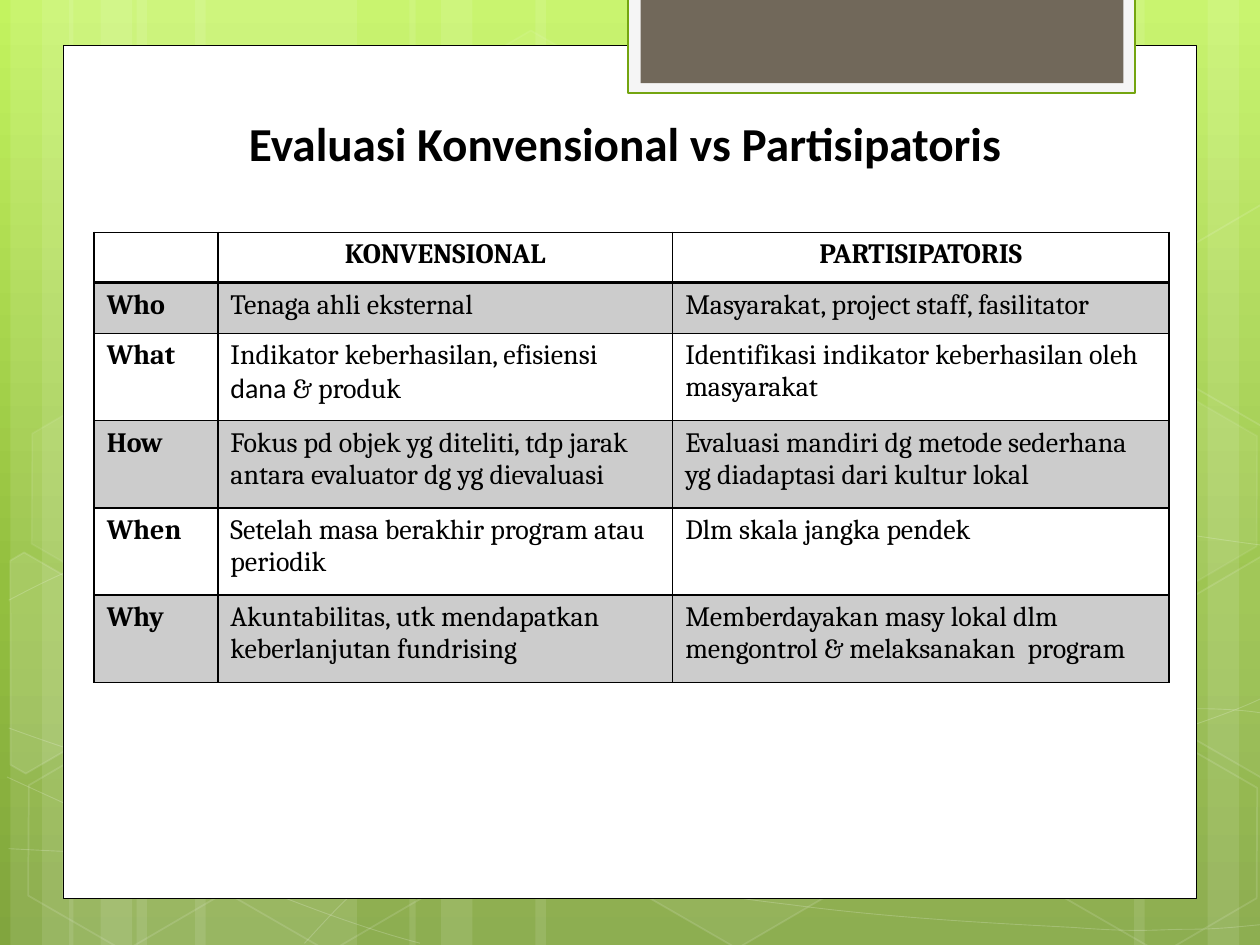
import copy
import lxml.etree
import pptx
import pptx.dml.color
import pptx.dml.fill
import pptx.enum.shapes
import pptx.enum.text
import pptx.oxml.ns
import pptx.util

Pt = pptx.util.Pt
qn = pptx.oxml.ns.qn
SHAPES = pptx.enum.shapes.MSO_SHAPE
CENTER = pptx.enum.text.PP_ALIGN.CENTER


def color(value):
    return pptx.dml.color.RGBColor.from_string(value)


def paint(parent, value, opacity=100):
    fill = pptx.dml.fill.FillFormat.from_fill_parent(parent)
    if not opacity:
        fill.background()
        return
    fill.solid()
    fill.fore_color.rgb = color(value)
    if opacity < 100:
        solid = parent.find(qn("a:solidFill")).find(qn("a:srgbClr"))
        lxml.etree.SubElement(solid, qn("a:alpha"), val=str(opacity * 1000))


presentation = pptx.Presentation()
presentation.slide_width, presentation.slide_height = Pt(720), Pt(540)
slide = presentation.slides.add_slide(presentation.slide_layouts[6])
shapes = slide.shapes

background = slide.background.fill
background.gradient()
background.gradient_angle = 270
stop_list = slide._element.find(".//" + qn("a:gsLst"))
stop_list.insert(1, copy.deepcopy(stop_list[0]))
gradient = [(0, "C3F35F"), (0.62, "93BF3F"), (1, "81A53E")]
for stop, (position, value) in zip(background.gradient_stops, gradient):
    stop.position = position
    stop.color.rgb = color(value)

styled = []

stripes = [
    (78, 126, 0), (6, 36, 0), (24, 60, 0), (111.5, 126, 0), (39.5, 36, 0), (57.5, 60, 0),
    (528, 126, 180), (690, 36, 180), (648, 60, 180), (306, 222, 0), (234, 36, 0), (252, 60, 0),
]
for left, width, rotation in stripes:
    stripe = shapes.add_shape(SHAPES.RECTANGLE, Pt(left), 0, Pt(width), Pt(540))
    stripe.rotation = rotation
    styled.append((stripe, "FFFFFF", 10, "FFFFFF", 0, 0))

curves = [
    [(5, 485), (44, 487), (83, 489), (137, 488), (191, 487), (258, 486), (330, 479),
     (402, 472), (504, 458), (570, 444), (636, 431), (703, 409), (725, 397)],
    [(5, 343), (26, 332), (47, 321), (87, 310), (128, 300), (186, 284), (250, 279),
     (314, 274), (392, 273), (471, 279), (550, 284), (682, 307), (725, 312)],
    [(4, 444), (91, 484), (178, 523), (240, 539)],
    [(5, 416), (27, 424), (50, 432), (92, 444), (134, 454), (197, 472), (257, 485),
     (317, 497), (392, 510), (452, 517), (512, 525), (576, 528), (614, 530),
     (652, 533), (662, 531), (680, 531), (699, 531), (712, 529), (725, 528)],
    [(174, 539), (187, 525), (200, 510), (217, 498), (235, 485), (259, 470), (279, 460),
     (300, 450), (312, 446), (338, 438), (364, 431), (413, 421), (438, 416),
     (464, 411), (467, 411), (490, 410), (512, 408), (547, 405), (572, 405),
     (597, 404), (638, 405), (638, 405), (654, 405), (670, 405), (686, 405),
     (699, 405), (711, 406), (718, 407), (724, 408), (722, 407), (724, 408)],
]
for controls in curves:
    points = [(Pt(x), Pt(y)) for x, y in controls]
    builder = shapes.build_freeform(*points[0])
    builder.add_line_segments(points[1:], close=False)
    curve = builder.convert_to_shape()
    outline = curve._element.find(".//" + qn("a:path"))
    lines = outline.findall(qn("a:lnTo"))
    for first in range(0, len(lines), 3):
        bezier = lxml.etree.SubElement(outline, qn("a:cubicBezTo"))
        for line in lines[first:first + 3]:
            bezier.append(line[0])
            outline.remove(line)
    styled.append((curve, "FFFFFF", 0, "FFFFFF", 0.5, 20))

hexagons = [
    (240.5, 26, 4, 8), (358, 424, 6, 12), (8, 425.5, 0, 12), (10, 224.5, 7, 8),
    (125, 426, 0, 12), (542, 326, 10, 12), (600.5, 427, 0, 12), (600.5, 226, 7, 8),
]
for left, top, fill_opacity, line_opacity in hexagons:
    hexagon = shapes.add_shape(SHAPES.HEXAGON, Pt(left), Pt(top), Pt(126), Pt(109.5))
    hexagon.adjustments[0] = 0.285
    hexagon.adjustments[1] = 1.155
    hexagon.rotation = 30
    styled.append((hexagon, "FFFFFF", fill_opacity, "FFFFFF", 1, line_opacity))

left_cut = [(-24, 339), (-19.5, 331), (44, 331), (75.5, 386), (44.5, 440), (34.5, 440)]
right_cut = [(660, 374), (691, 319.5), (697.5, 319.5), (757.5, 423.5), (754.5, 429), (691.5, 429)]
for corners, rise, fill_opacity in [(left_cut, 0, 10), (right_cut, 0, 4), (right_cut, 201, 0)]:
    points = [(Pt(x), Pt(y - rise)) for x, y in corners]
    builder = shapes.build_freeform(*points[0])
    builder.add_line_segments(points[1:])
    cut_hexagon = builder.convert_to_shape()
    cut_hexagon.rotation = 30
    styled.append((cut_hexagon, "FFFFFF", fill_opacity, "FFFFFF", 1, 12))

panels = [
    (36, 25.9, 648, 487.3, "FFFFFF", "000000", 0.5, 100),
    (359, -1.5, 289.5, 54.5, "F5F5F5", "74A510", 1.25, 100),
    (366, -1.5, 276, 49, "71685A", "71685A", 0, 0),
]
for left, top, width, height, fill, line, line_width, line_opacity in panels:
    panel = shapes.add_shape(SHAPES.RECTANGLE, Pt(left), Pt(top), Pt(width), Pt(height))
    styled.append((panel, fill, 100, line, line_width, line_opacity))

for shape, fill, fill_opacity, line, line_width, line_opacity in styled:
    shape.shadow.inherit = False
    paint(shape._element.spPr, fill, fill_opacity)
    shape.line.width = Pt(line_width)
    paint(shape._element.spPr.find(qn("a:ln")), line, line_opacity)

title = shapes.add_textbox(Pt(80), Pt(52.5), Pt(554.5), Pt(57.5))
title.text_frame.word_wrap = True
title.text_frame.vertical_anchor = pptx.enum.text.MSO_ANCHOR.MIDDLE
paragraph = title.text_frame.paragraphs[0]
paragraph.alignment = CENTER
run = paragraph.add_run()
run.text = "Evaluasi Konvensional vs Partisipatoris"
run.font.name, run.font.size, run.font.bold = "Calibri", Pt(27), True
paint(run._r.get_or_add_rPr(), "000000")

rows = [
    ("", "KONVENSIONAL", "PARTISIPATORIS"),
    ("Who", "Tenaga ahli eksternal", "Masyarakat, project staff, fasilitator"),
    ("What", "Indikator keberhasilan, efisiensi |dana| & produk",
     "Identifikasi indikator keberhasilan oleh masyarakat"),
    ("How", "Fokus pd objek yg diteliti, tdp jarak antara evaluator dg yg dievaluasi",
     "Evaluasi mandiri dg metode sederhana yg diadaptasi dari kultur lokal"),
    ("When", "Setelah masa berakhir program atau periodik", "Dlm skala jangka pendek"),
    ("Why", "Akuntabilitas, utk mendapatkan keberlanjutan fundrising",
     "Memberdayakan masy lokal dlm mengontrol & melaksanakan  program"),
]
frame = shapes.add_table(len(rows), 3, Pt(53.8), Pt(132.8), Pt(614.3), Pt(257.2))
table = frame.table
table.first_row = table.horz_banding = False
for column, width in zip(table.columns, (70.7, 259.9, 283.7)):
    column.width = Pt(width)
for row_index, texts in enumerate(rows):
    table.rows[row_index].height = Pt(28.8 if row_index < 2 else 49.9)
    for column_index, text in enumerate(texts):
        cell = table.cell(row_index, column_index)
        properties = cell._tc.get_or_add_tcPr()
        for side in "LRTB":
            heavy = (row_index, side) in ((0, "B"), (1, "T"))
            border = lxml.etree.SubElement(
                properties, qn("a:ln" + side), w=str(Pt(2 if heavy else 1)))
            solid = lxml.etree.SubElement(border, qn("a:solidFill"))
            lxml.etree.SubElement(solid, qn("a:srgbClr"), val="000000")
        paint(properties, "000000", 20 if row_index % 2 else 0)
        paragraph = cell.text_frame.paragraphs[0]
        if row_index == 0:
            paragraph.alignment = CENTER
        parts = text.split("|") if text else []
        if len(parts) > 1:
            cell.margin_right = Pt(9)
        for part_index, part in enumerate(parts):
            run = paragraph.add_run()
            run.text = part
            run.font.name = "Calibri" if part_index == 1 else "Cambria"
            run.font.size = Pt(16)
            run.font.bold = row_index == 0 or column_index == 0
            paint(run._r.get_or_add_rPr(), "000000")

presentation.save("out.pptx")
